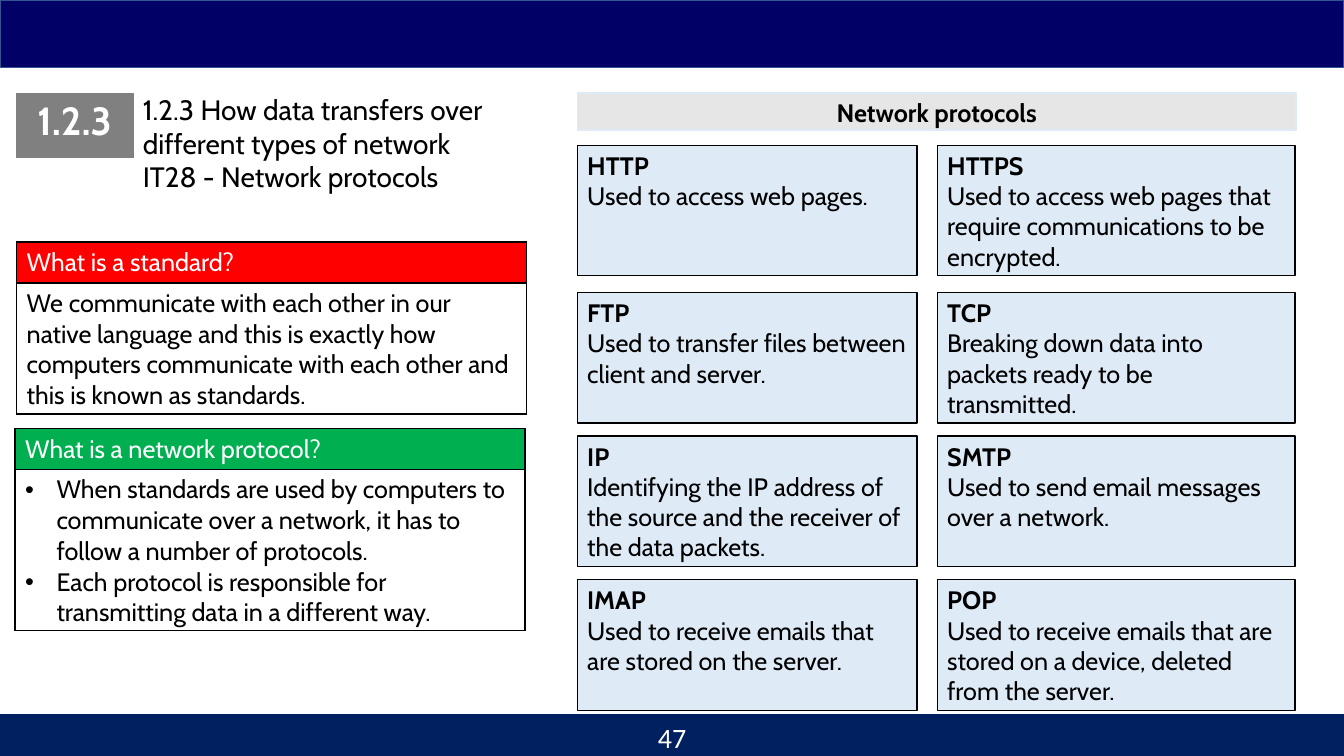
from lxml import etree
from pptx import Presentation
from pptx import util as u
from pptx.dml.color import RGBColor
from pptx.enum import shapes, text
from pptx.oxml.ns import qn

HUE = {"navy": "000066", "edge": "325491", "foot": "002060", "grey": "808080",
       "head": "E7E6E6", "pale": "DEEBF7", "red": "FF0000", "green": "00B050",
       "black": "000000", "white": "FFFFFF"}
LEFT = text.PP_ALIGN.LEFT
MID = text.PP_ALIGN.CENTER
CARDS = [
    ("HTTP", "Used to access web pages."),
    ("HTTPS", "Used to access web pages that require communications to be encrypted."),
    ("FTP", "Used to transfer files between client and server."),
    ("TCP", "Breaking down data into packets ready to be transmitted."),
    ("IP", "Identifying the IP address of the source and the receiver of the data packets."),
    ("SMTP", "Used to send email messages over a network."),
    ("IMAP", "Used to receive emails that are stored on the server."),
    ("POP", "Used to receive emails that are stored on a device, deleted from the server."),
]
COLS = [(14.55, 8.56), (23.62, 9.02)]
ROWS = [3.66, 7.37, 10.99, 14.61]


def rgb(name):
    """Return the named colour."""
    return RGBColor.from_string(HUE[name])


def write(frame, lines, size=18, hue="black", align=LEFT, bold=False, font="Cabin"):
    """Fill a text frame, one paragraph a line."""
    frame.text = "\n".join(lines)
    frame.word_wrap = True
    for para in frame.paragraphs:
        para.alignment = align
        for run in para.runs:
            run.font.name = font
            run.font.size = u.Pt(size)
            run.font.bold = bold
            run.font.color.rgb = rgb(hue)


def label(slide, box, lines, **look):
    """Add a text box."""
    shape = slide.shapes.add_textbox(*map(u.Cm, box))
    write(shape.text_frame, lines, **look)


def panel(slide, box, fill, line, lines=(), **look):
    """Add a filled rectangle with text at its top."""
    shape = slide.shapes.add_shape(shapes.MSO_SHAPE.RECTANGLE, *map(u.Cm, box))
    shape.shadow.inherit = False
    shape.fill.solid()
    shape.fill.fore_color.rgb = rgb(fill)
    shape.line.color.rgb = rgb(line)
    shape.line.width = u.Pt(1)
    frame = shape.text_frame
    frame.vertical_anchor = text.MSO_ANCHOR.TOP
    write(frame, lines, **look)
    return frame


def border(cell, hue, low=1):
    """Draw the four cell borders, the bottom one low points wide."""
    props = cell._tc.get_or_add_tcPr()
    for side in "LRTB":
        width = u.Pt(low if side == "B" else 1)
        line = etree.SubElement(props, qn("a:ln" + side), w=str(width))
        fill = etree.SubElement(line, qn("a:solidFill"))
        etree.SubElement(fill, qn("a:srgbClr"), val=HUE[hue])


def grid(slide, x, y, wide, highs, fills, edge, cols=1, low=1):
    """Add a plain table with one fill a row."""
    box = map(u.Cm, (x, y, wide, sum(highs)))
    table = slide.shapes.add_table(len(highs), cols, *box).table
    table.first_row = table.horz_banding = False
    for row, high, fill in zip(table.rows, highs, fills):
        row.height = u.Cm(high)
        for cell in row.cells:
            border(cell, edge, low)
            cell.fill.solid()
            cell.fill.fore_color.rgb = rgb(fill)
    return table


def bullet(para):
    """Give a paragraph a hanging bullet."""
    props = para._p.get_or_add_pPr()
    props.set("marL", str(u.Cm(0.79)))
    props.set("indent", str(u.Cm(-0.79)))
    etree.SubElement(props, qn("a:buFont"), typeface="Arial")
    etree.SubElement(props, qn("a:buChar"), char="•")


def topic(slide, x, y, high, hue, title, lines):
    """Add a titled two-row table and return its body text."""
    table = grid(slide, x, y, 12.85, (1.03, high), (hue, "white"), "black")
    write(table.cell(0, 0).text_frame, [title], hue="white")
    body = table.cell(1, 0).text_frame
    write(body, lines)
    return body


def card(slide, box, name, use):
    """Add a protocol card with a bold name."""
    frame = panel(slide, box, "pale", "black", [name, use])
    frame.paragraphs[0].runs[0].font.bold = True


def main():
    """Build the slide."""
    deck = Presentation()
    deck.slide_width, deck.slide_height = u.Cm(33.87), u.Cm(19.05)
    slide = deck.slides.add_slide(deck.slide_layouts[6])
    grid(slide, 0, 18.01, 33.87, [1.04], ["foot"], "foot", cols=3)
    panel(slide, (0, 0, 33.87, 1.7), "navy", "edge")
    label(slide, (3.35, 2.21, 11.46, 2.82),
          ["1.2.3 How data transfers over different types of network",
           "IT28 - Network protocols"], size=20)
    badge = grid(slide, 0.38, 2.34, 3, [1.7], ["grey"], "white", low=3)
    write(badge.cell(0, 0).text_frame, ["1.2.3"], 28, "white", MID, True)
    panel(slide, (14.55, 2.34, 18.11, 0.94), "head", "pale",
          ["Network protocols"], align=MID, bold=True)
    topic(slide, 0.42, 6.1, 3.3, "red", "What is a standard?",
          ["We communicate with each other in our native language and this is "
           "exactly how computers communicate with each other and this is known "
           "as standards."])
    body = topic(slide, 0.38, 10.8, 4.05, "green", "What is a network protocol?",
                 ["When standards are used by computers to communicate over a "
                  "network, it has to follow a number of protocols.",
                  "Each protocol is responsible for transmitting data in a "
                  "different way."])
    for para in body.paragraphs:
        bullet(para)
    for i, (name, use) in enumerate(CARDS):
        x, wide = COLS[i % 2]
        card(slide, (x, ROWS[i // 2], wide, 3.29), name, use)
    label(slide, (13.13, 18.03, 7.62, 1.02), ["47"], size=20, hue="white",
          align=MID, font="Calibri")
    deck.save("out.pptx")


if __name__ == "__main__":
    main()
